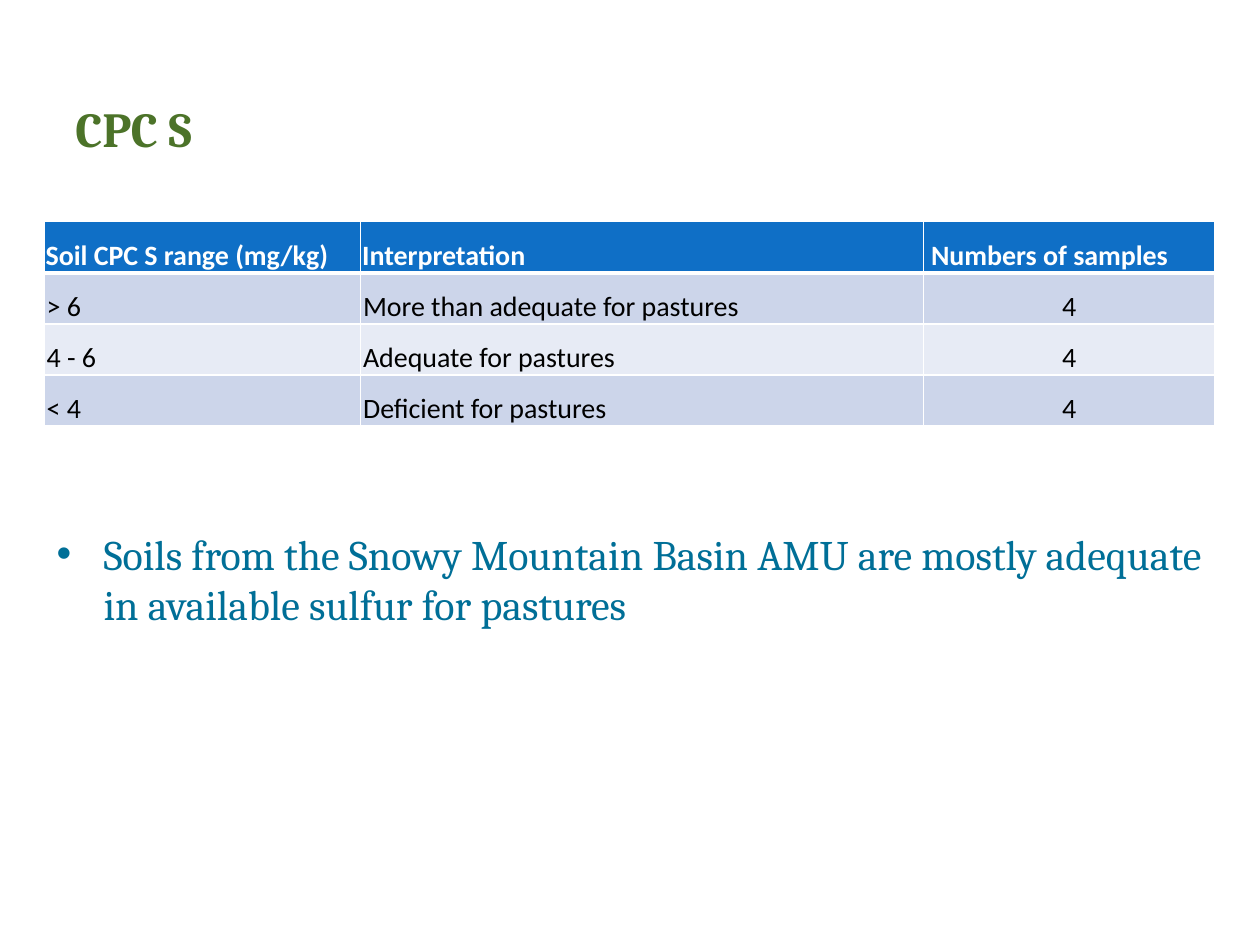
import pptx
import pptx.dml.color
import pptx.enum.text
import pptx.oxml.ns
import pptx.util
from lxml import etree

Cm, Pt = pptx.util.Cm, pptx.util.Pt
ANCHOR = pptx.enum.text.MSO_ANCHOR
ALIGN = pptx.enum.text.PP_ALIGN
qn = pptx.oxml.ns.qn

COLORS = {
    "title": "4C7329",
    "body": "006F97",
    "header": "0F6FC6",
    "band_dark": "CCD5EA",
    "band_light": "E7EBF5",
    "white": "FFFFFF",
    "black": "000000",
}
TITLE_FONT = {"name": "Cambria", "size": Pt(28), "bold": True}
BODY_FONT = {"name": "Cambria", "size": Pt(24), "bold": False}
HEADER_FONT = {"name": "Calibri", "size": Pt(16), "bold": True}
CELL_FONT = {**HEADER_FONT, "bold": False}

COL_WIDTHS = [6.38, 11.35, 5.87]
ROW_HEIGHT = 1.03
ROWS = [
    ["Soil CPC S range (mg/kg)", "Interpretation", "Numbers of samples"],
    ["> 6", "More than adequate for pastures", "4"],
    ["4 - 6", "Adequate for pastures", "4"],
    ["< 4", "Deficient for pastures", "4"],
]


def rgb(key):
    return pptx.dml.color.RGBColor.from_string(COLORS[key])


def set_attrs(obj, values):
    for name, value in values.items():
        setattr(obj, name, value)


def write(p, text, font, color):
    p.text = text
    set_attrs(p.runs[0].font, font)
    p.runs[0].font.color.rgb = rgb(color)


def add_box(slide, box, anchor):
    tf = slide.shapes.add_textbox(*map(Cm, box)).text_frame
    set_attrs(tf, {"word_wrap": True, "vertical_anchor": anchor})
    return tf


def set_borders(cell, widths):
    """Draw white cell borders; widths maps each side tag to points."""
    tc_pr = cell._tc.get_or_add_tcPr()
    for i, (side, width) in enumerate(widths.items()):
        ln = etree.Element(qn("a:" + side), w=str(Pt(width)))
        fill = etree.SubElement(ln, qn("a:solidFill"))
        etree.SubElement(fill, qn("a:srgbClr"), val=COLORS["white"])
        tc_pr.insert(i, ln)


def add_title(slide, box):
    tf = add_box(slide, box, ANCHOR.MIDDLE)
    write(tf.paragraphs[0], "CPC S", TITLE_FONT, "title")


def add_samples_table(slide, left, top):
    size = sum(COL_WIDTHS), ROW_HEIGHT * len(ROWS)
    table = slide.shapes.add_table(
        len(ROWS), len(COL_WIDTHS), *map(Cm, (left, top, *size))).table
    for col, width in zip(table.columns, COL_WIDTHS):
        col.width = Cm(width)

    for i, texts in enumerate(ROWS):
        table.rows[i].height = Cm(ROW_HEIGHT)
        header = i == 0
        fill = "header" if header else ("band_light", "band_dark")[i % 2]
        font, color = (HEADER_FONT, "white") if header else (CELL_FONT, "black")
        for j, text in enumerate(texts):
            cell = table.cell(i, j)
            last = j == len(COL_WIDTHS) - 1
            side = 0.03 if header else 0.05
            set_attrs(cell, {
                "vertical_anchor": ANCHOR.BOTTOM,
                "margin_left": Cm(0.15 if header and last else side),
                "margin_right": Cm(side),
                "margin_top": Cm(0.03),
                "margin_bottom": 0,
            })
            cell.fill.solid()
            cell.fill.fore_color.rgb = rgb(fill)
            p = cell.text_frame.paragraphs[0]
            p.alignment = ALIGN.CENTER if last and not header else ALIGN.LEFT
            write(p, text, font, color)
            # The rule under the header row is heavier
            set_borders(cell, {"lnL": 1, "lnR": 1, "lnT": 3 if i == 1 else 1,
                               "lnB": 3 if header else 1})


def add_conclusion(slide, box):
    tf = add_box(slide, box, ANCHOR.TOP)
    tf.margin_right = Cm(0.2)
    p = tf.paragraphs[0]
    p_pr = p._p.get_or_add_pPr()
    p_pr.set("marL", str(Cm(0.95)))
    p_pr.set("indent", str(-Cm(0.95)))
    etree.SubElement(p_pr, qn("a:buFont"), typeface="Arial")
    etree.SubElement(p_pr, qn("a:buChar"), char="•")
    write(p, "Soils from the Snowy Mountain Basin AMU are mostly adequate "
             "in available sulfur for pastures", BODY_FONT, "body")


def main():
    prs = pptx.Presentation()
    prs.slide_width, prs.slide_height = Cm(25.4), Cm(19.05)
    slide = prs.slides.add_slide(prs.slide_layouts[6])
    add_title(slide, (1.27, 1.22, 22.86, 2.72))
    add_samples_table(slide, 0.89, 4.47)
    add_conclusion(slide, (0.89, 10.52, sum(COL_WIDTHS), 6.15))
    prs.save("out.pptx")


if __name__ == "__main__":
    main()
